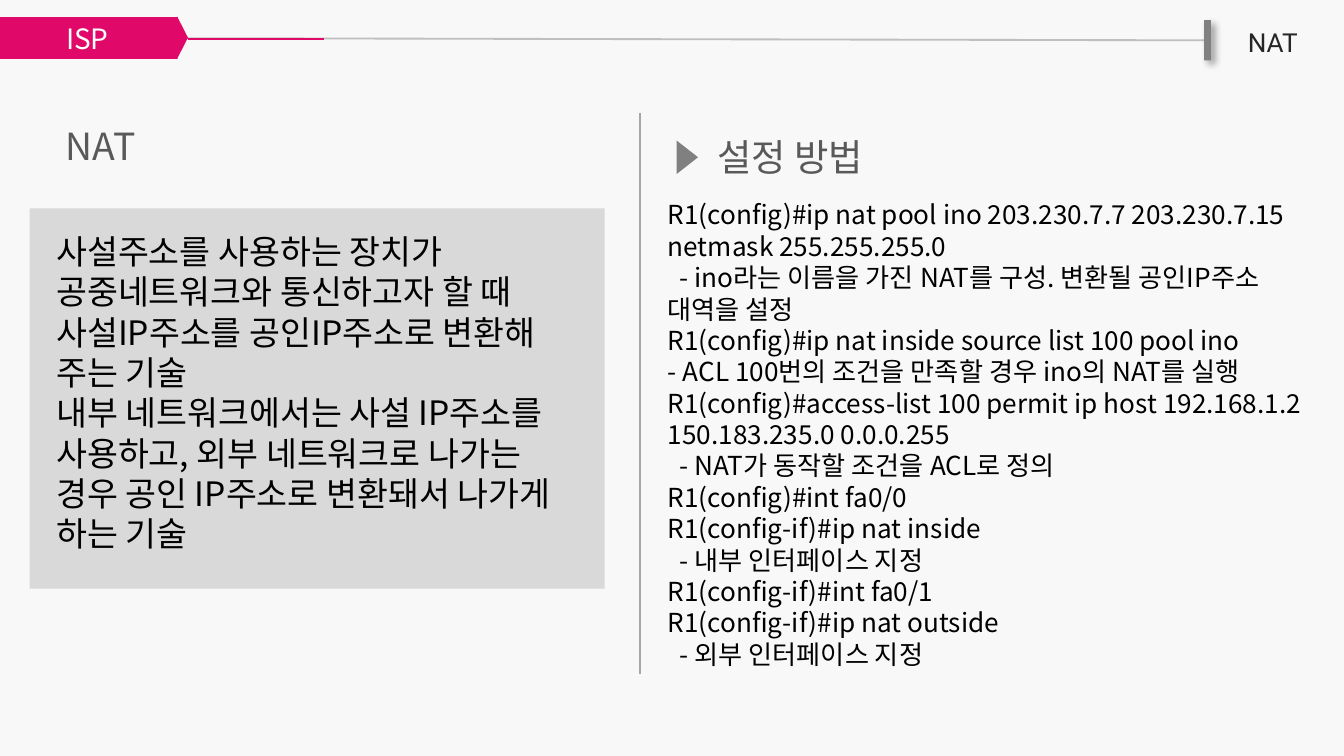
"""Build the NAT slide: a definition on the left, router configuration on the right."""
from lxml import etree
from pptx import Presentation
from pptx.dml.color import RGBColor
from pptx.enum import shapes, text
from pptx.oxml import ns
from pptx.util import Pt

COLORS = {
    "paper": "F8F8F8", "panel": "D9D9D9", "rule": "BFBFBF", "divider": "A6A6A6",
    "accent": "E00868", "marker": "808080", "heading": "595959", "topic": "262626",
    "body": "000000", "white": "FFFFFF",
}
KOREAN, LATIN = "Noto Sans CJK KR", "Roboto"
SHAPE, ALIGN = shapes.MSO_SHAPE, text.PP_ALIGN


def add_block(kind, box, fill, rotation=0):
    block = slide.shapes.add_shape(kind, *map(Pt, box))
    block.shadow.inherit = False
    block.fill.solid()
    block.fill.fore_color.rgb = RGBColor.from_string(COLORS[fill])
    block.line.fill.background()
    block.rotation = rotation
    return block


def write(holder, lines, size, color, face=KOREAN, align=ALIGN.LEFT):
    frame = holder.text_frame
    frame.word_wrap = True
    for number, line in enumerate(lines):
        paragraph = frame.add_paragraph() if number else frame.paragraphs[0]
        paragraph_format = {"alignment": align, "line_spacing": Pt(size * 1.2)}
        for name, value in paragraph_format.items():
            setattr(paragraph, name, value)
        if line.startswith(" "):
            paragraph._p.get_or_add_pPr().set("indent", str(Pt(6.4)))
        run = paragraph.add_run()
        run.text = line.strip()
        for name, value in {"size": Pt(size), "name": face}.items():
            setattr(run.font, name, value)
        run.font.color.rgb = RGBColor.from_string(COLORS[color])
        etree.SubElement(run._r.get_or_add_rPr(), ns.qn("a:ea"), typeface=face)


deck = Presentation()
deck.slide_width, deck.slide_height = Pt(720), Pt(405)
slide = deck.slides.add_slide(deck.slide_layouts[6])
slide.background.fill.solid()
slide.background.fill.fore_color.rgb = RGBColor.from_string(COLORS["paper"])

add_block(SHAPE.RECTANGLE, (15.84, 111.6, 308.16, 203.76), "panel")

rules = []
for ends, color in [
    ((25.2, 20.3, 645.12, 21.6), "rule"),
    ((100.8, 20.8, 173.5, 20.8), "accent"),
    ((342.72, 60.5, 342.72, 361), "divider"),
]:
    rule = slide.shapes.add_connector(shapes.MSO_CONNECTOR.STRAIGHT, *map(Pt, ends))
    rule.line.width = Pt(1)
    rule.line.color.rgb = RGBColor.from_string(COLORS[color])
    etree.SubElement(rule._element.spPr, ns.qn("a:effectLst"))
    rules.append(rule)

end_bar = add_block(SHAPE.RECTANGLE, (645.12, 10.8, 3.6, 21.6), "marker")
rules[0].end_connect(end_bar, 1)
effects = end_bar._element.spPr.find(ns.qn("a:effectLst"))
shadow = etree.SubElement(effects, ns.qn("a:outerShdw"), blurRad=str(Pt(4)),
                          dist=str(Pt(3)), dir="2700000", algn="tl", rotWithShape="0")
shade = etree.SubElement(shadow, ns.qn("a:srgbClr"), val=COLORS["body"])
etree.SubElement(shade, ns.qn("a:alpha"), val="40000")

section_tag = add_block(SHAPE.RECTANGLE, (-1.44, 9.2, 96.5, 22.4), "accent")
section_tag.text_frame.vertical_anchor = text.MSO_ANCHOR.MIDDLE
write(section_tag, ["ISP"], 15, "white", align=ALIGN.CENTER)
add_block(SHAPE.ISOSCELES_TRIANGLE, (86.4, 17.3, 22.8, 5.8), "accent", 90)
add_block(SHAPE.ISOSCELES_TRIANGLE, (359.2, 78.5, 18, 11.5), "marker", 90)

definition = [
    "사설주소를 사용하는 장치가 공중네트워크와 통신하고자 할 때 "
    "사설IP주소를 공인IP주소로 변환해 주는 기술",
    "내부 네트워크에서는 사설 IP주소를 사용하고, 외부 네트워크로 나가는 "
    "경우 공인 IP주소로 변환돼서 나가게 하는 기술",
]
configuration = [
    "R1(config)#ip nat pool ino 203.230.7.7 203.230.7.15 netmask 255.255.255.0",
    " - ino라는 이름을 가진 NAT를 구성. 변환될 공인IP주소 대역을 설정",
    "R1(config)#ip nat inside source list 100 pool ino",
    "- ACL 100번의 조건을 만족할 경우 ino의 NAT를 실행",
    "R1(config)#access-list 100 permit ip host 192.168.1.2 150.183.235.0 0.0.0.255",
    " - NAT가 동작할 조건을 ACL로 정의",
    "R1(config)#int fa0/0",
    "R1(config-if)#ip nat inside",
    " - 내부 인터페이스 지정",
    "R1(config-if)#int fa0/1",
    "R1(config-if)#ip nat outside",
    " - 외부 인터페이스 지정",
]
for box, lines, size, color, face, align in [
    ((646.56, 10.8, 70.56, 24.5), ["NAT"], 14, "topic", LATIN, ALIGN.CENTER),
    ((26.64, 62.64, 54.72, 31.7), ["NAT"], 20, "heading", KOREAN, ALIGN.CENTER),
    ((372.24, 68.4, 102.24, 31.7), ["설정 방법"], 20, "heading", KOREAN, ALIGN.CENTER),
    ((23.04, 120.24, 293.76, 181.44), definition, 18, "body", KOREAN, ALIGN.LEFT),
    ((350.64, 102.96, 366.48, 262.08), configuration, 14, "body", KOREAN, ALIGN.LEFT),
]:
    write(slide.shapes.add_textbox(*map(Pt, box)), lines, size, color, face, align)

deck.save("out.pptx")
